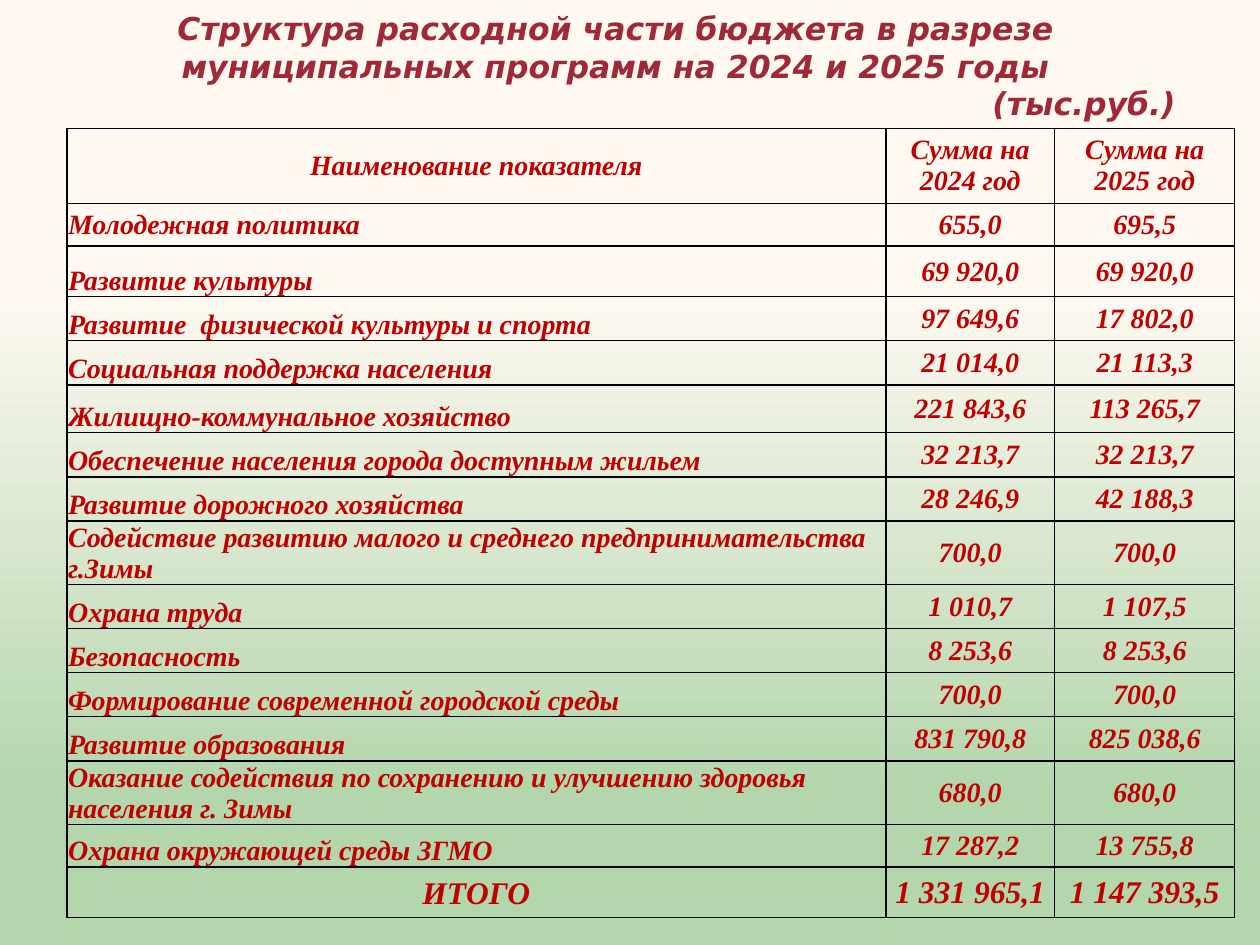
"""Build the slide on municipal programme spending for 2024 and 2025."""
from lxml.etree import SubElement
from pptx import Presentation
from pptx.dml.color import RGBColor
from pptx.enum.text import MSO_ANCHOR, MSO_AUTO_SIZE, PP_ALIGN
from pptx.oxml.ns import qn
from pptx.util import Inches, Pt

TITLE = "Структура расходной части бюджета в разрезе муниципальных программ на 2024 и 2025 годы"
UNIT = "(тыс.руб.)"
HEADER = ("Наименование показателя", "Сумма на 2024 год", "Сумма на 2025 год")
PROGRAMMES = [
    ("Молодежная политика", "655,0", "695,5"),
    ("Развитие культуры", "69 920,0", "69 920,0"),
    ("Развитие  физической культуры и спорта", "97 649,6", "17 802,0"),
    ("Социальная поддержка населения", "21 014,0", "21 113,3"),
    ("Жилищно-коммунальное хозяйство", "221 843,6", "113 265,7"),
    ("Обеспечение населения города доступным жильем", "32 213,7", "32 213,7"),
    ("Развитие дорожного хозяйства", "28 246,9", "42 188,3"),
    ("Содействие развитию малого и среднего предпринимательства г.Зимы", "700,0", "700,0"),
    ("Охрана труда", "1 010,7", "1 107,5"),
    ("Безопасность", "8 253,6", "8 253,6"),
    ("Формирование современной городской среды", "700,0", "700,0"),
    ("Развитие образования", "831 790,8", "825 038,6"),
    ("Оказание содействия по сохранению и улучшению здоровья населения г. Зимы", "680,0", "680,0"),
    ("Охрана окружающей среды ЗГМО", "17 287,2", "13 755,8"),
]
TOTAL = ("ИТОГО", "1 331 965,1", "1 147 393,5")
COLUMN_WIDTHS = (6.5, 1.34, 1.43)
ROW_HEIGHT = 0.35
SPECIAL_HEIGHTS = {0: 0.51, 1: 0.34, 2: 0.4, 5: 0.38, 13: 0.34, 14: 0.34, 15: 0.4}
THEME = {
    "title_font": "DejaVu Sans", "table_font": "Times New Roman",
    "title_color": "9F2936", "table_color": "C00000", "border_color": "000000",
    "title_size": 18, "table_size": 16, "total_size": 18, "border_width": 1,
    "background": ((0.30, "FFF9F2"), (0.84, "B3D6AC")),
}


def add_text(paragraph, text, role, size, align):
    paragraph.alignment = align
    run = paragraph.add_run()
    run.text = text
    font = run.font
    font.name = THEME[f"{role}_font"]
    font.size = Pt(size)
    font.bold = font.italic = True
    font.color.rgb = RGBColor.from_string(THEME[f"{role}_color"])


def add_borders(cell):
    properties = cell._tc.get_or_add_tcPr()
    for index, side in enumerate(("lnL", "lnR", "lnT", "lnB")):
        line = properties.makeelement(qn(f"a:{side}"), {"w": str(Pt(THEME["border_width"]))})
        fill = SubElement(line, qn("a:solidFill"))
        SubElement(fill, qn("a:srgbClr"), val=THEME["border_color"])
        properties.insert(index, line)


def paint_background(slide):
    fill = slide.background.fill
    fill.gradient()
    fill.gradient_angle = 270
    for stop, (position, color) in zip(fill.gradient_stops, THEME["background"]):
        stop.position = position
        stop.color.rgb = RGBColor.from_string(color)


def add_title(slide):
    title = slide.shapes.title
    title.left, title.top, title.width, title.height = map(Inches, (0.24, 0.41, 9.29, 0.61))
    frame = title.text_frame
    frame.word_wrap = True
    frame.auto_size = MSO_AUTO_SIZE.NONE
    frame.vertical_anchor = MSO_ANCHOR.BOTTOM
    add_text(frame.paragraphs[0], TITLE, "title", THEME["title_size"], PP_ALIGN.CENTER)
    unit = frame.add_paragraph()
    add_text(unit, UNIT, "title", THEME["title_size"], PP_ALIGN.RIGHT)
    unit._p.get_or_add_pPr().set("marR", str(Inches(0.1)))
    for paragraph in frame.paragraphs:
        paragraph.space_before = Pt(0)


def fill_cell(cell, text, row, column, last):
    is_header, is_total, is_name = row == 0, row == last, column == 0
    is_edge_name = is_name and (is_header or is_total)
    cell.fill.background()
    add_borders(cell)
    if not is_header and not (is_total and is_name):
        cell.margin_left = cell.margin_right = cell.margin_top = Inches(0.01)
        cell.margin_bottom = 0
    cell.vertical_anchor = MSO_ANCHOR.BOTTOM if is_name and row > 1 else MSO_ANCHOR.MIDDLE
    paragraph = cell.text_frame.paragraphs[0]
    align = PP_ALIGN.LEFT if is_name and not is_edge_name else PP_ALIGN.CENTER
    add_text(paragraph, text, "table", THEME["total_size" if is_total else "table_size"], align)
    if is_edge_name:
        properties = paragraph._p.get_or_add_pPr()
        properties.set("marL", str(Inches(0.29)))
        properties.set("indent", str(Inches(-0.29)))


def add_budget_table(slide):
    rows = [HEADER, *PROGRAMMES, TOTAL]
    box = [Inches(length) for length in (0.53, 1.02, 9.27, 6.4)]
    frame = slide.shapes.add_table(len(rows), len(HEADER), *box)
    table = frame.table
    table.first_row = table.horz_banding = False
    for column, width in zip(table.columns, COLUMN_WIDTHS):
        column.width = Inches(width)
    for row, texts in enumerate(rows):
        table.rows[row].height = Inches(SPECIAL_HEIGHTS.get(row, ROW_HEIGHT))
        for column, text in enumerate(texts):
            fill_cell(table.cell(row, column), text, row, column, len(rows) - 1)
    frame.height = box[3]


def main():
    presentation = Presentation()
    presentation.slide_width, presentation.slide_height = Inches(10), Inches(7.5)
    slide = presentation.slides.add_slide(presentation.slide_layouts[5])
    paint_background(slide)
    add_title(slide)
    add_budget_table(slide)
    presentation.save("out.pptx")


if __name__ == "__main__":
    main()
